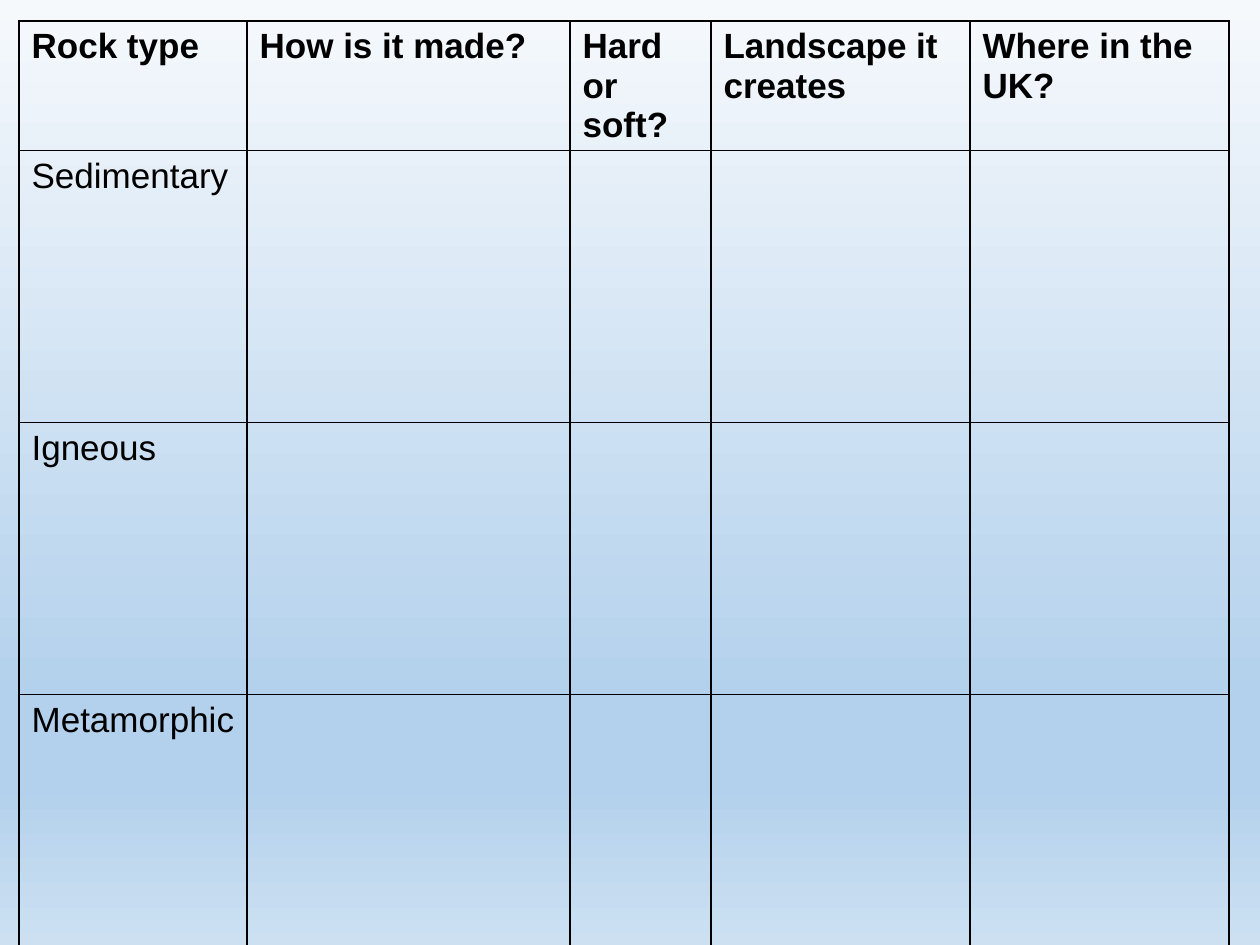
from lxml import etree
from pptx import Presentation
from pptx.dml.color import RGBColor
from pptx.oxml.ns import qn
from pptx.util import Pt

PX = 914400 // 126  # EMU in one px
BLANK_LAYOUT = 6
FONT = "Arial"
COLORS = {"ink": "000000", "mist": "F6F9FC", "sky": "B3D1EC", "haze": "CCE0F2"}
GRADIENT = [(0, "mist"), (74, "sky"), (83, "sky"), (100, "haze")]

LEFT, TOP = 19, 21
COLUMN_WIDTHS = [228, 323, 141, 259, 259]
HEADER_HEIGHT, ROW_HEIGHT = 88, 272
HEADINGS = ["Rock type", "How is it made?", "Hard or soft?",
            "Landscape it creates", "Where in the UK?"]
ROCKS = ["Sedimentary", "Igneous", "Metamorphic"]


def add_color(parent, name):
    etree.SubElement(parent, qn("a:srgbClr"), val=COLORS[name])


def paint_background(page):
    """Fill the page with a top-to-bottom gradient of several stops."""
    fill = page.background.fill
    fill.gradient()
    fill.gradient_angle = 270
    stops = page.element.find(".//" + qn("a:gsLst"))
    for stop in list(stops):
        stops.remove(stop)
    for percent, name in GRADIENT:
        stop = etree.SubElement(stops, qn("a:gs"), pos=str(percent * 1000))
        add_color(stop, name)


def add_borders(cell):
    properties = cell._tc.get_or_add_tcPr()
    for side in ("lnL", "lnR", "lnT", "lnB"):
        line = etree.SubElement(properties, qn("a:" + side), w=str(Pt(1)))
        add_color(etree.SubElement(line, qn("a:solidFill")), "ink")


def format_cell(cell, text, bold):
    add_borders(cell)
    cell.fill.background()
    cell.text_frame.text = text
    for para in cell.text_frame.paragraphs:
        for span in para.runs:
            span.font.name = FONT
            span.font.size = Pt(20)
            span.font.bold = bold
            span.font.color.rgb = RGBColor.from_string(COLORS["ink"])


def add_rock_table(page):
    heights = [HEADER_HEIGHT] + [ROW_HEIGHT] * len(ROCKS)
    frame = page.shapes.add_table(
        len(heights), len(COLUMN_WIDTHS), LEFT * PX, TOP * PX,
        sum(COLUMN_WIDTHS) * PX, sum(heights) * PX)
    table = frame.table
    table.first_row = False
    table.horz_banding = False
    for column, width in zip(table.columns, COLUMN_WIDTHS):
        column.width = width * PX
    for row, height in zip(table.rows, heights):
        row.height = height * PX

    # Headings on top, rock names down the first column, the rest to fill in
    blanks = [""] * (len(HEADINGS) - 1)
    contents = [HEADINGS] + [[rock] + blanks for rock in ROCKS]
    for index, (row, texts) in enumerate(zip(table.rows, contents)):
        for cell, text in zip(row.cells, texts):
            format_cell(cell, text, bold=index == 0)


def main():
    deck = Presentation()
    deck.slide_width = 1260 * PX
    deck.slide_height = 945 * PX
    page = deck.slides.add_slide(deck.slide_layouts[BLANK_LAYOUT])
    paint_background(page)
    add_rock_table(page)
    deck.save("out.pptx")


if __name__ == "__main__":
    main()
